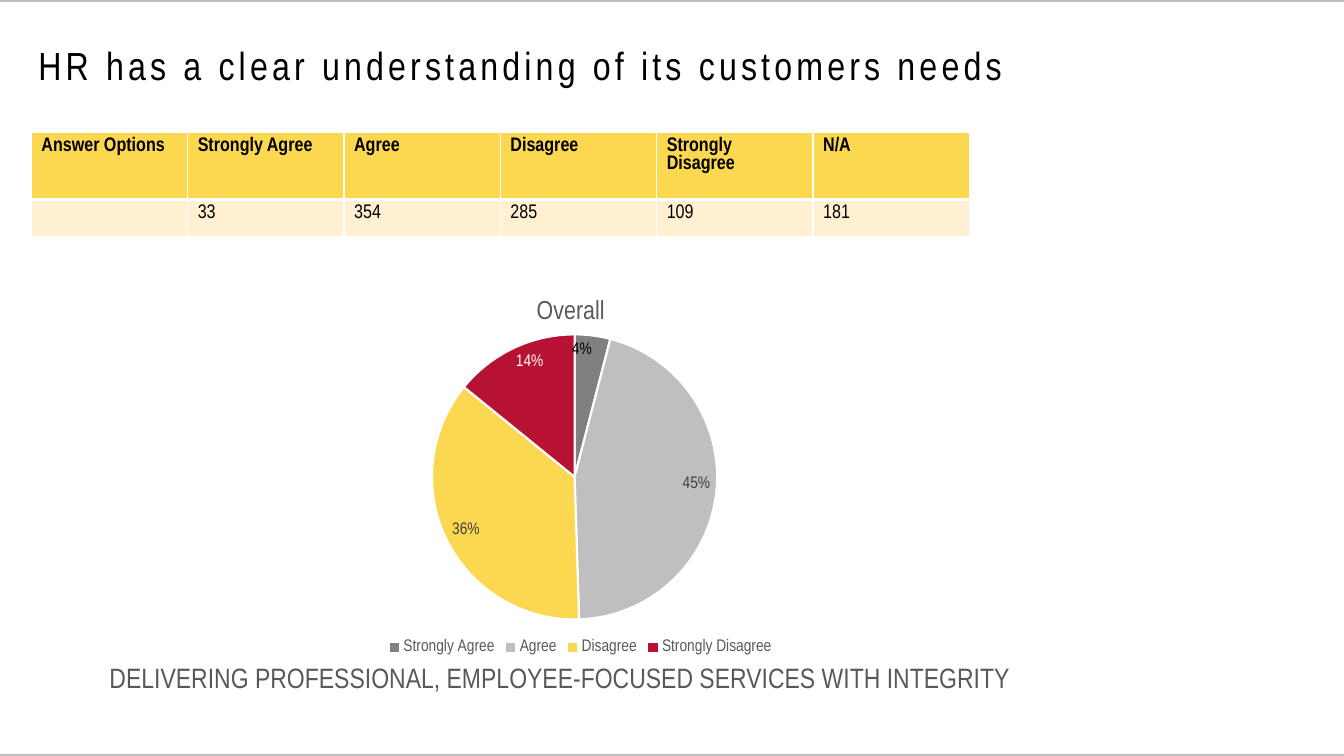
from dataclasses import dataclass

from lxml import etree
from pptx import Presentation
from pptx import util as u
from pptx.chart import data as chart_data
from pptx.dml.color import RGBColor
from pptx.enum import chart as ch
from pptx.enum import shapes, text
from pptx.oxml import ns

FONT = "Arial Narrow"
BLACK = RGBColor(0x00, 0x00, 0x00)
WHITE = RGBColor(0xFF, 0xFF, 0xFF)
SLATE = RGBColor(0x59, 0x59, 0x59)
CHARCOAL = RGBColor(0x40, 0x40, 0x40)
GREY = RGBColor(0x80, 0x80, 0x80)
SILVER = RGBColor(0xBF, 0xBF, 0xBF)
YELLOW = RGBColor(0xFC, 0xD7, 0x50)
CREAM = RGBColor(0xFE, 0xF0, 0xD0)
RED = RGBColor(0xB7, 0x12, 0x34)

SLIDE_WIDTH, SLIDE_HEIGHT, RULE_HEIGHT = 33.87, 19.05, 0.05


@dataclass
class AnswerRow:
    height: float
    fill: RGBColor
    bold: bool
    bottom_border: float
    entries: list[str]


@dataclass
class Slice:
    answer: str
    percent: int
    fill: RGBColor
    label_color: RGBColor = CHARCOAL


ANSWER_ROWS = [
    AnswerRow(1.7, YELLOW, True, 3,
              ["Answer Options", "Strongly Agree", "Agree", "Disagree", "Strongly Disagree", "N/A"]),
    AnswerRow(0.94, CREAM, False, 1, ["", "33", "354", "285", "109", "181"]),
]
SLICES = [
    Slice("Strongly Agree", 4, GREY, BLACK),
    Slice("Agree", 45, SILVER),
    Slice("Disagree", 36, YELLOW),
    Slice("Strongly Disagree", 14, RED, WHITE),
]


def style_font(font, size: float, color: RGBColor, bold: bool = False) -> None:
    font.name = FONT
    font.size = u.Pt(size)
    font.bold = bold
    font.color.rgb = color


def add_run(paragraph, wording: str, size: float, color: RGBColor, bold: bool = False):
    run = paragraph.add_run()
    run.text = wording
    style_font(run.font, size, color, bold)
    return run


def place(part, left: float, top: float, width: float, height: float) -> None:
    part.left, part.top = u.Cm(left), u.Cm(top)
    part.width, part.height = u.Cm(width), u.Cm(height)


def add_rule(slide, top: float) -> None:
    rule = slide.shapes.add_shape(shapes.MSO_SHAPE.RECTANGLE, 0, u.Cm(top),
                                  u.Cm(SLIDE_WIDTH), u.Cm(RULE_HEIGHT))
    rule.shadow.inherit = False
    rule.fill.solid()
    rule.fill.fore_color.rgb = SILVER
    rule.line.fill.background()


def add_heading(slide) -> None:
    heading = slide.shapes.title
    place(heading, 0.71, 0.38, 26.01, 2.67)
    frame = heading.text_frame
    frame.auto_size = text.MSO_AUTO_SIZE.NONE
    frame.vertical_anchor = text.MSO_ANCHOR.MIDDLE
    paragraph = frame.paragraphs[0]
    paragraph.alignment = text.PP_ALIGN.LEFT
    paragraph.line_spacing = 0.85
    run = add_run(paragraph, "HR has a clear understanding of its customers needs", 28, BLACK)
    run.font._element.set("spc", "300")


def set_borders(cell, bottom: float) -> None:
    properties = cell._tc.get_or_add_tcPr()
    for index, (side, width) in enumerate({"L": 1, "R": 1, "T": 1, "B": bottom}.items()):
        border = etree.Element(ns.qn(f"a:ln{side}"), w=str(u.Pt(width)))
        fill = etree.SubElement(border, ns.qn("a:solidFill"))
        etree.SubElement(fill, ns.qn("a:srgbClr"), val=str(WHITE))
        properties.insert(index, border)


def add_answers(slide) -> None:
    columns = len(ANSWER_ROWS[0].entries)
    answers = slide.shapes.add_table(len(ANSWER_ROWS), columns, u.Cm(0.79), u.Cm(3.33),
                                     u.Cm(23.64), u.Cm(2.64)).table
    for row_index, answer_row in enumerate(ANSWER_ROWS):
        answers.rows[row_index].height = u.Cm(answer_row.height)
        for column_index, entry in enumerate(answer_row.entries):
            cell = answers.cell(row_index, column_index)
            cell.fill.solid()
            cell.fill.fore_color.rgb = answer_row.fill
            set_borders(cell, answer_row.bottom_border)
            paragraph = cell.text_frame.paragraphs[0]
            if entry:
                add_run(paragraph, entry, 14, BLACK, answer_row.bold)
            else:
                etree.SubElement(paragraph._p, ns.qn("a:endParaRPr"), sz="1400")


def set_layout(parent, index: int, **settings) -> None:
    layout = parent.find(ns.qn("c:layout"))
    if layout is None:
        layout = etree.Element(ns.qn("c:layout"))
        parent.insert(index, layout)
    for child in list(layout):
        layout.remove(child)
    manual = etree.SubElement(layout, ns.qn("c:manualLayout"))
    for name, setting in settings.items():
        etree.SubElement(manual, ns.qn(f"c:{name}"), val=str(setting))


def add_pie(slide) -> None:
    shares = chart_data.CategoryChartData()
    shares.categories = [share.answer for share in SLICES]
    shares.add_series("Series 1", [share.percent for share in SLICES])
    pie = slide.shapes.add_chart(ch.XL_CHART_TYPE.PIE, u.Cm(5.89), u.Cm(7.29),
                                 u.Cm(17.48), u.Cm(9.32), shares).chart
    style_font(pie.font, 10, BLACK)

    pie.has_title = True
    add_run(pie.chart_title.text_frame.paragraphs[0], "Overall", 18.6, SLATE)
    set_layout(pie.chart_title._element, 1, xMode="edge", yMode="edge", x=0.43, y=0.01)
    set_layout(pie._chartSpace.chart.plotArea, 0, layoutTarget="inner", xMode="edge",
               yMode="edge", x=0.126, y=0.122, w=0.731, h=0.771)

    pie.has_legend = True
    pie.legend.position = ch.XL_LEGEND_POSITION.BOTTOM
    pie.legend.include_in_layout = False
    style_font(pie.legend.font, 12, SLATE)

    pie.plots[0].vary_by_categories = True
    series = pie.plots[0].series[0]
    labels = series.data_labels
    labels.show_value = False
    labels.show_percentage = True
    labels.number_format = "0%"
    labels.number_format_is_linked = False
    labels.position = ch.XL_LABEL_POSITION.INSIDE_END
    style_font(labels.font, 12, CHARCOAL)
    for index, share in enumerate(SLICES):
        point = series.points[index]
        point.format.fill.solid()
        point.format.fill.fore_color.rgb = share.fill
        point.format.line.color.rgb = WHITE
        point.format.line.width = u.Pt(1.5)
        if share.label_color != CHARCOAL:
            style_font(point.data_label.font, 12, share.label_color)
            point.data_label.position = ch.XL_LABEL_POSITION.INSIDE_END
    for label in series._element.iter(ns.qn("c:dLbl")):
        label.find(ns.qn("c:showVal")).set("val", "0")
        label.find(ns.qn("c:showPercent")).set("val", "1")


def add_tagline(slide) -> None:
    tagline = slide.shapes.add_textbox(u.Cm(2.51), u.Cm(16.61), u.Cm(24.36), u.Cm(1.85))
    tagline.text_frame.word_wrap = True
    paragraph = tagline.text_frame.paragraphs[0]
    paragraph.line_spacing = 0.9
    add_run(paragraph, "DELIVERING PROFESSIONAL, EMPLOYEE-FOCUSED SERVICES WITH INTEGRITY", 20, SLATE)


def main() -> None:
    deck = Presentation()
    deck.slide_width, deck.slide_height = u.Cm(SLIDE_WIDTH), u.Cm(SLIDE_HEIGHT)
    slide = deck.slides.add_slide(deck.slide_layouts[5])
    for top in (0, SLIDE_HEIGHT - RULE_HEIGHT):
        add_rule(slide, top)
    add_heading(slide)
    add_pie(slide)
    add_answers(slide)
    add_tagline(slide)
    deck.save("out.pptx")


if __name__ == "__main__":
    main()
